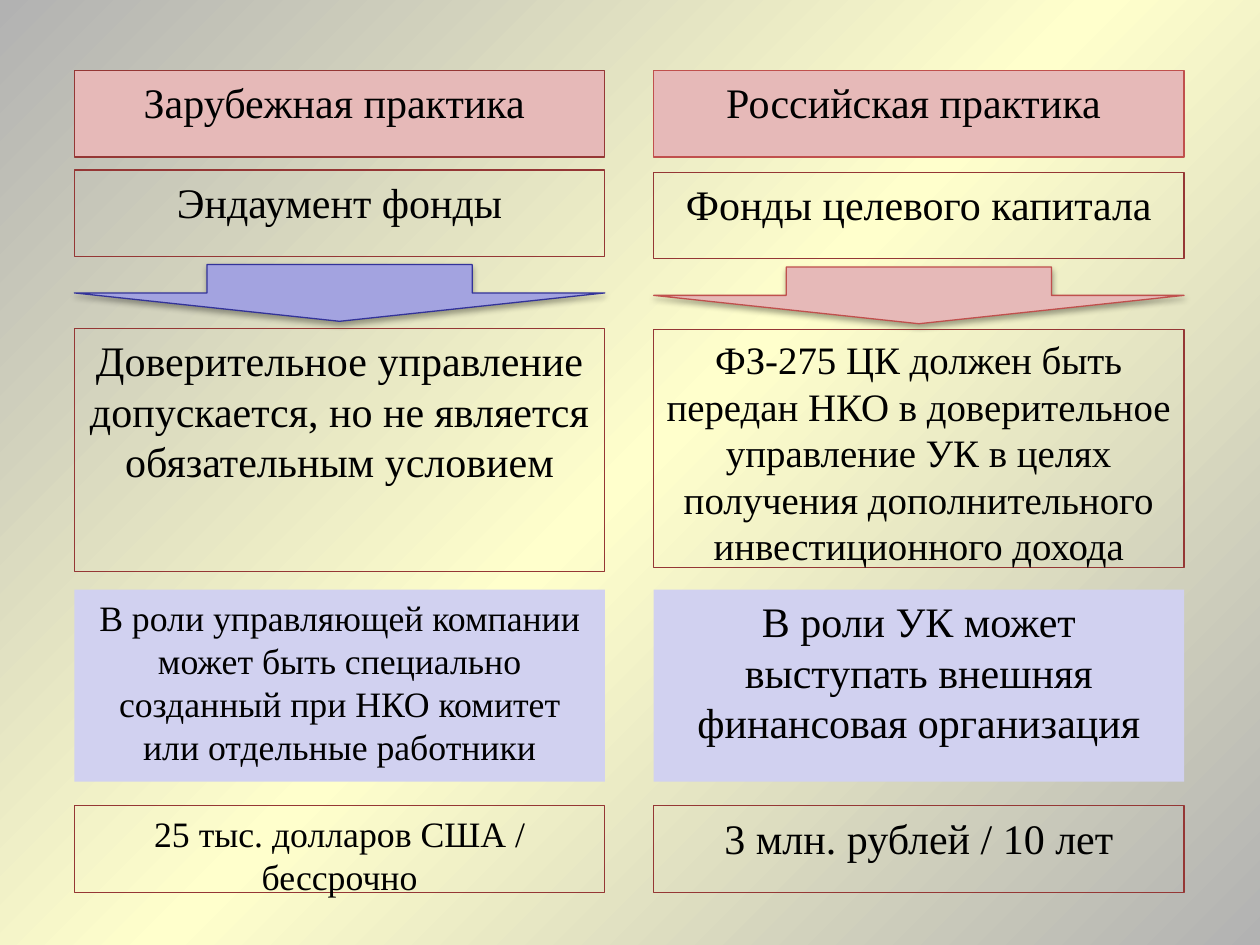
from copy import deepcopy

from lxml import etree
from pptx import Presentation
from pptx.dml.color import RGBColor
from pptx.enum.shapes import MSO_SHAPE
from pptx.enum.text import MSO_ANCHOR, MSO_AUTO_SIZE, PP_ALIGN
from pptx.oxml.ns import qn
from pptx.util import Pt

RECTANGLE = MSO_SHAPE.RECTANGLE
DOWN_ARROW = MSO_SHAPE.DOWN_ARROW
TOP = MSO_ANCHOR.TOP
NO_AUTOFIT = MSO_AUTO_SIZE.NONE
CENTER = PP_ALIGN.CENTER

BLACK = RGBColor(0, 0, 0)
GRAY = RGBColor(0xB2, 0xB2, 0xB2)
CREAM = RGBColor(0xFF, 0xFF, 0xCC)
PINK = RGBColor(0xE6, 0xB9, 0xB8)
RED = RGBColor(0xC0, 0x50, 0x4D)
DARK_RED = RGBColor(0x95, 0x37, 0x35)
LILAC = RGBColor(0xD1, 0xD1, 0xF0)
BLUE = RGBColor(0xA3, 0xA3, 0xE0)
DARK_BLUE = RGBColor(0x33, 0x33, 0x99)

FONT = "Times New Roman"
COMPARISON_LAYOUT = 4
COLUMN_WIDTH = 303.1
ARROW_HEIGHT = 32.4

# Each box: top, height, text, font size, fill, line
FOREIGN = {
    "left": 42.5,
    "placeholder": 1,
    "heading": (40.3, 49.4, "Зарубежная практика ", 24, PINK, DARK_RED),
    "arrow": (151.2, BLUE, DARK_BLUE),
    "boxes": [
        (97.2, 49.4, "Эндаумент фонды", 24, None, DARK_RED),
        (187.7, 138.8, "Доверительное управление допускается, но не является "
         "обязательным условием", 24, None, DARK_RED),
        (337, 109.7, "В роли управляющей компании может быть специально "
         "созданный при НКО комитет или отдельные работники", 20.4, LILAC, None),
        (460.5, 49.4, "25 тыс. долларов США / бессрочно", 20.4, None, DARK_RED),
    ],
}
RUSSIAN = {
    "left": 373.5,
    "placeholder": 3,
    "heading": (40.3, 49.4, "Российская практика ", 24, PINK, RED),
    "arrow": (152.6, PINK, RED),
    "boxes": [
        (98.6, 49.2, "Фонды целевого капитала", 24, None, DARK_RED),
        (188.2, 136.1, "ФЗ-275 ЦК должен быть передан НКО в доверительное "
         "управление УК в целях получения дополнительного "
         "инвестиционного дохода", 22.2, None, DARK_RED),
        (337, 109.7, "В роли УК может выступать внешняя финансовая "
         "организация", 24, LILAC, None),
        (460.5, 49.4, "3 млн. рублей / 10 лет", 24, None, DARK_RED),
    ],
}


def set_background(slide):
    fill = slide.background.fill
    fill.gradient()
    fill.gradient_angle = 315
    stop_list = fill._fill._gradFill.find(qn("a:gsLst"))
    stop_list.append(deepcopy(stop_list[0]))
    for stop, position, color in zip(fill.gradient_stops, (0, 0.5, 1), (GRAY, CREAM, GRAY)):
        stop.position = position
        stop.color.rgb = color


def paint(shape, fill, line):
    if fill is None:
        shape.fill.background()
    else:
        shape.fill.solid()
        shape.fill.fore_color.rgb = fill
    if line is None:
        shape.line.fill.background()
    else:
        shape.line.color.rgb = line
        shape.line.width = Pt(0.75)


def write_text(shape, text, size):
    frame = shape.text_frame
    frame.word_wrap = True
    frame.auto_size = NO_AUTOFIT
    frame.vertical_anchor = TOP
    paragraph = frame.paragraphs[0]
    paragraph.alignment = CENTER
    paragraph.space_before = Pt(0)
    run = paragraph.add_run()
    run.text = text
    run.font.name = FONT
    run.font.size = Pt(size)
    run.font.bold = False
    run.font.color.rgb = BLACK


def add_heading(slide, left, index, heading):
    top, height, text, size, fill, line = heading
    shape = slide.placeholders[index]
    shape.left, shape.top = Pt(left), Pt(top)
    shape.width, shape.height = Pt(COLUMN_WIDTH), Pt(height)
    paint(shape, fill, line)
    write_text(shape, text, size)


def add_shape(slide, kind, left, top, height, fill, line):
    shape = slide.shapes.add_shape(kind, Pt(left), Pt(top), Pt(COLUMN_WIDTH), Pt(height))
    shape.shadow.inherit = False
    paint(shape, fill, line)
    return shape


def add_soft_shadow(shape):
    effects = shape._element.spPr.find(qn("a:effectLst"))
    shadow = etree.SubElement(effects, qn("a:outerShdw"), blurRad=str(Pt(3.1)),
                              dist=str(Pt(1.8)), dir="5400000", rotWithShape="0")
    color = etree.SubElement(shadow, qn("a:srgbClr"), val=str(BLACK))
    etree.SubElement(color, qn("a:alpha"), val="35000")


def add_column(slide, column):
    left = column["left"]
    add_heading(slide, left, column["placeholder"], column["heading"])
    arrow_top, arrow_fill, arrow_line = column["arrow"]
    arrow = add_shape(slide, DOWN_ARROW, left, arrow_top, ARROW_HEIGHT, arrow_fill, arrow_line)
    add_soft_shadow(arrow)
    for top, height, text, size, fill, line in column["boxes"]:
        box = add_shape(slide, RECTANGLE, left, top, height, fill, line)
        write_text(box, text, size)


def remove_empty_placeholders(slide):
    for placeholder in list(slide.placeholders):
        if not placeholder.text_frame.text:
            placeholder._element.getparent().remove(placeholder._element)


def main():
    presentation = Presentation()
    presentation.slide_width = Pt(720)
    presentation.slide_height = Pt(540)
    slide = presentation.slides.add_slide(presentation.slide_layouts[COMPARISON_LAYOUT])
    set_background(slide)
    for column in (FOREIGN, RUSSIAN):
        add_column(slide, column)
    remove_empty_placeholders(slide)
    presentation.save("out.pptx")


if __name__ == "__main__":
    main()
